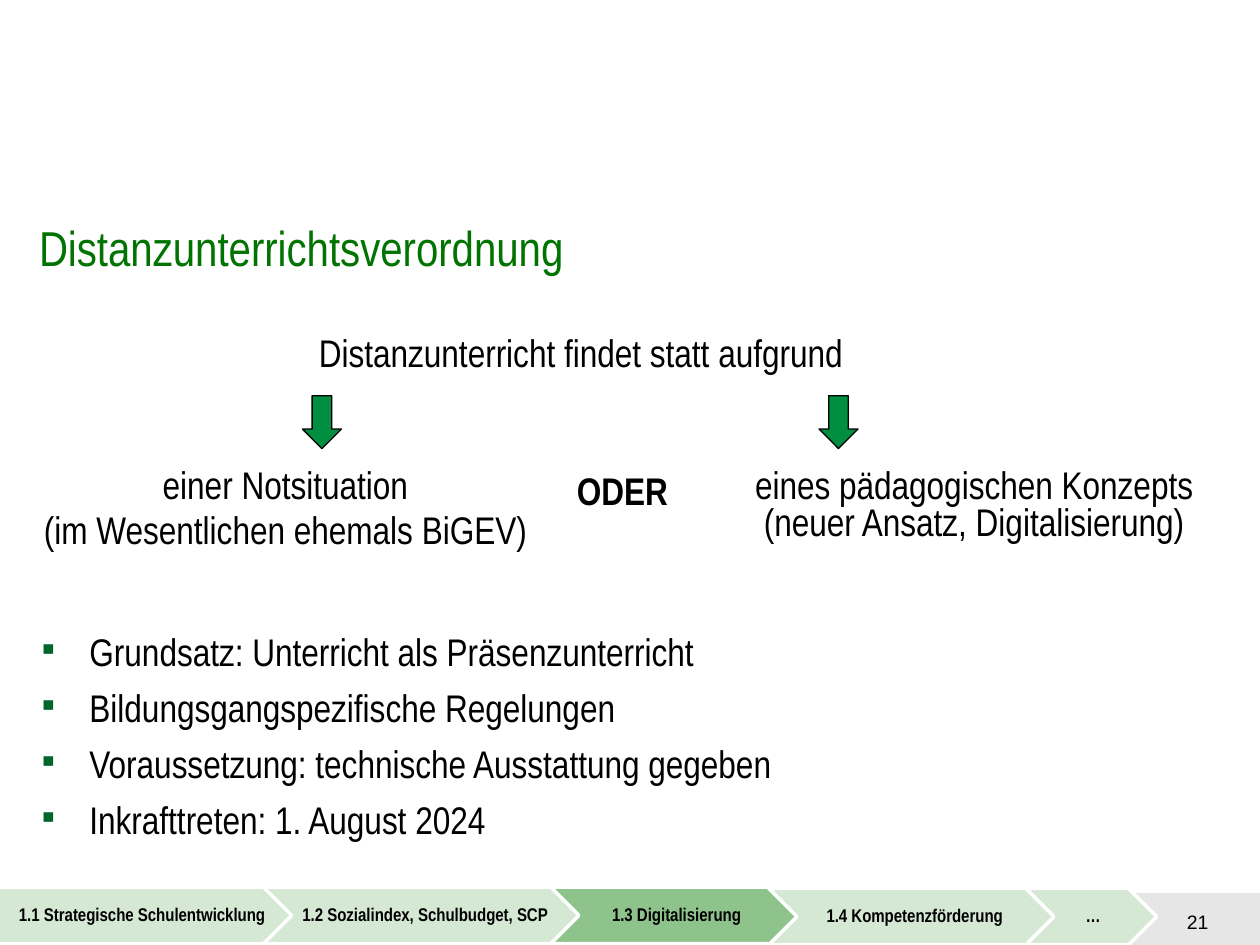
from lxml import etree
from pptx import Presentation, util as u
from pptx.dml.color import RGBColor
from pptx.enum import shapes, text
from pptx.oxml.ns import qn

THEME = dict(
    font="Arial Narrow", number_font="Arial",
    title=28, body=22, number=11.1, step=10.5,
    black="000000", white="FFFFFF", heading="007300", bullet="00642D",
    arrow="008E40", bar="E6E6E6", step_fill="D5E8D4", active="8EC38B",
)
SHAPE = shapes.MSO_SHAPE
ALIGN = text.PP_ALIGN
ANCHOR = text.MSO_ANCHOR

TITLE = "Distanzunterrichtsverordnung"
POINTS = [
    "Grundsatz: Unterricht als Präsenzunterricht",
    "Bildungsgangspezifische Regelungen",
    "Voraussetzung: technische Ausstattung gegeben",
    "Inkrafttreten: 1. August 2024",
]
STATEMENTS = [
    (["Distanzunterricht findet statt aufgrund"], (-0.39, 2.63, 10, 0.47), False),
    (["einer Notsituation", "(im Wesentlichen ehemals BiGEV)"], (0, 3.68, 4.53, 0.74), False),
    (["ODER"], (-0.07, 3.73, 10.02, 0.38), True),
    (["eines pädagogischen Konzepts (neuer Ansatz, Digitalisierung)"],
     (5.57, 3.68, 4.32, 1.07), False),
]
ARROW_LEFTS = [2.4, 6.5]
STEPS = [
    ("1.1 Strategische Schulentwicklung", -0.02, 7.04, 2.37),
    ("1.2 Sozialindex, Schulbudget, SCP", 2.09, 7.04, 2.54),
    ("1.3 Digitalisierung", 4.37, 7.04, 1.97),
    ("1.4 Kompetenzförderung", 6.1, 7.05, 2.29),
    ("…", 8.14, 7.05, 1.04),
]
ACTIVE_STEP = 2
NUMBER = "21"


def rgb(name):
    return RGBColor.from_string(THEME[name])


def apply(obj, **values):
    for name, value in values.items():
        setattr(obj, name, value)


def place(sp, box):
    apply(sp, **dict(zip(("left", "top", "width", "height"), map(u.Inches, box))))


def add_bullet(p):
    pPr = p._p.get_or_add_pPr()
    pPr.set("marL", str(u.Inches(0.38)))
    pPr.set("indent", str(u.Inches(-0.38)))
    color = etree.SubElement(pPr, qn("a:buClr"))
    etree.SubElement(color, qn("a:srgbClr"), val=THEME["bullet"])
    etree.SubElement(pPr, qn("a:buFont"), typeface=THEME["font"])
    etree.SubElement(pPr, qn("a:buChar"), char="▪")


def write(sp, lines, size, color="black", font="font", bold=False, bullets=False,
          gap=0, frame=None, **paragraph):
    tf = sp.text_frame
    apply(tf, word_wrap=True, auto_size=text.MSO_AUTO_SIZE.NONE, **(frame or {}))
    for i, line in enumerate(lines):
        p = tf.paragraphs[0] if i == 0 else tf.add_paragraph()
        if bullets:
            add_bullet(p)
        apply(p, space_before=u.Pt(gap if i else 0), **paragraph)
        r = p.add_run()
        r.text = line
        apply(r.font, name=THEME[font], size=u.Pt(THEME[size]), bold=bold)
        r.font.color.rgb = rgb(color)


def add_shape(s, kind, box, fill, line, width):
    sp = s.shapes.add_shape(kind, *map(u.Inches, box))
    sp.shadow.inherit = False
    sp.fill.solid()
    sp.fill.fore_color.rgb = rgb(fill)
    sp.line.color.rgb = rgb(line)
    sp.line.width = u.Pt(width)
    return sp


def add_text(s, box, lines, size, **style):
    write(s.shapes.add_textbox(*map(u.Inches, box)), lines, size, **style)


def main():
    prs = Presentation()
    apply(prs, slide_width=u.Inches(10), slide_height=u.Inches(7.5))
    s = prs.slides.add_slide(prs.slide_layouts[1])

    add_shape(s, SHAPE.RECTANGLE, (0, 7.08, 10, 0.42), "bar", "white", 0.1)
    title, body = s.shapes.title, s.placeholders[1]
    place(title, (0.21, 1.67, 9.67, 0.58))
    write(title, [TITLE], "title", color="heading", alignment=ALIGN.LEFT,
          frame=dict(vertical_anchor=ANCHOR.MIDDLE))
    place(body, (0.23, 4.86, 6.01, 2.04))
    write(body, POINTS, "body", bullets=True, line_spacing=u.Pt(32))

    for lines, box, bold in STATEMENTS:
        add_text(s, box, lines, "body", bold=bold, gap=0.2 * THEME["body"],
                 alignment=ALIGN.CENTER, line_spacing=0.8)
    for left in ARROW_LEFTS:
        add_shape(s, SHAPE.DOWN_ARROW, (left, 3.14, 0.31, 0.42), "arrow", "black", 0.75)

    for i, (label, left, top, width) in enumerate(STEPS):
        kind = SHAPE.CHEVRON if i else SHAPE.PENTAGON
        fill = "active" if i == ACTIVE_STEP else "step_fill"
        sp = add_shape(s, kind, (left, top, width, 0.45), fill, "white", 2)
        write(sp, [label], "step", bold=True, alignment=ALIGN.CENTER, line_spacing=0.9,
              frame=dict(vertical_anchor=ANCHOR.MIDDLE,
                         margin_left=u.Inches(0.05 if i else 0.06),
                         margin_right=u.Inches(0.02),
                         margin_top=u.Inches(0.03), margin_bottom=u.Inches(0.03)))

    add_text(s, (7.77, 7.17, 1.92, 0.33), [NUMBER], "number", font="number_font",
             alignment=ALIGN.RIGHT)
    prs.save("out.pptx")


if __name__ == "__main__":
    main()
